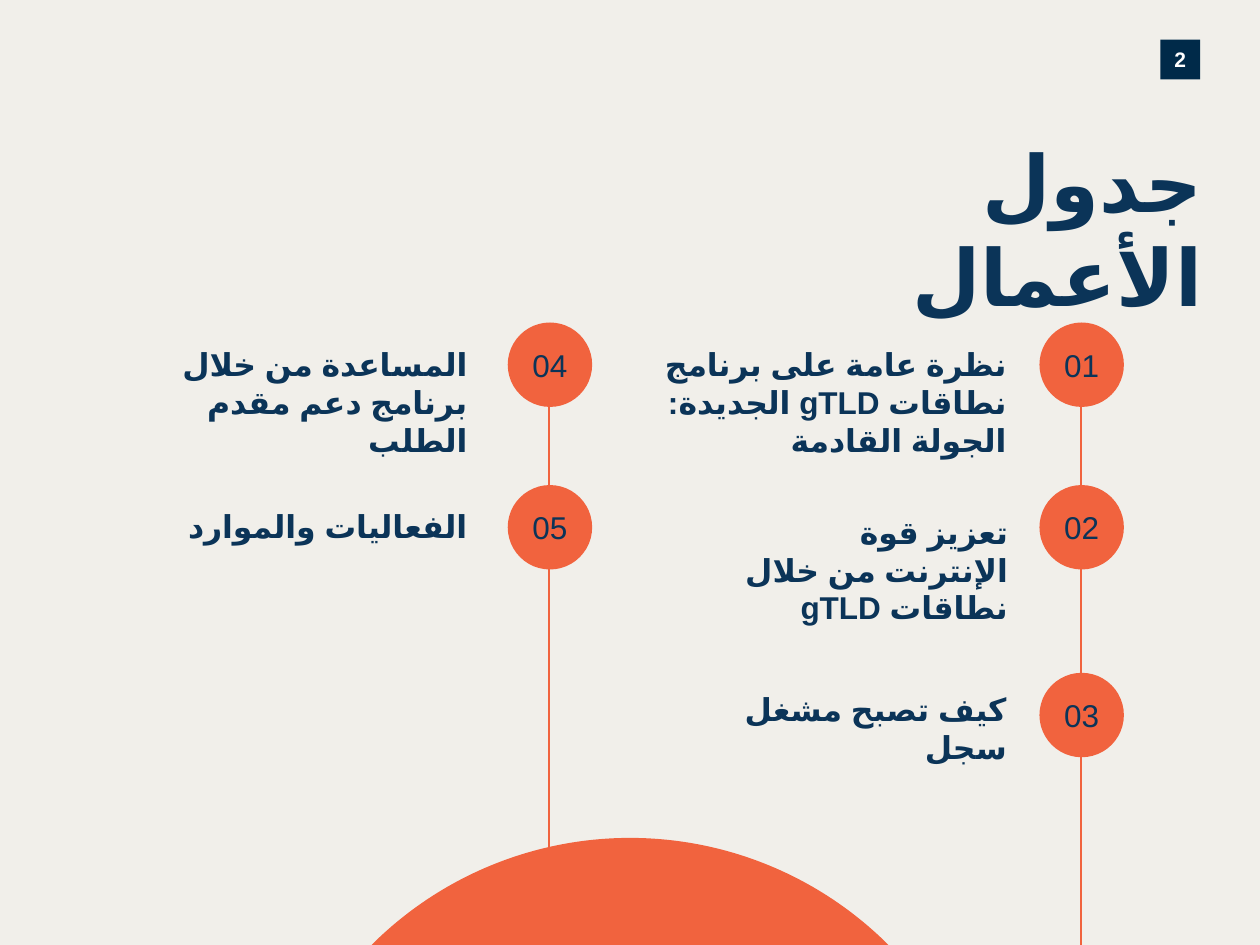
from dataclasses import dataclass

from lxml import etree
from pptx import Presentation
from pptx import util as u
from pptx.dml.color import RGBColor
from pptx.enum import lang, shapes, text
from pptx.oxml import ns


@dataclass(frozen=True)
class Theme:
    back: RGBColor = RGBColor.from_string("F1EFEA")
    ink: RGBColor = RGBColor.from_string("0B3458")
    badge: RGBColor = RGBColor.from_string("002A49")
    accent: RGBColor = RGBColor.from_string("F1633E")
    white: RGBColor = RGBColor.from_string("FFFFFF")
    face: str = "Arial"
    title: float = 45
    body: float = 18
    small: float = 12
    line: float = 1.25


@dataclass(frozen=True)
class Box:
    """Left, top, width and height in grid columns and rows."""
    x: float
    y: float
    w: float
    h: float


@dataclass(frozen=True)
class Item:
    mark: str
    col: float
    row: float
    label: str
    box: Box
    pad: float = 0
    grow: bool = True


THEME = Theme()
KIND = shapes.MSO_SHAPE
ALIGN = text.PP_ALIGN
CELL = u.Inches(0.1)  # the slide is 100 columns by 75 rows
COLS, ROWS = 100, 75
DISC = 6.7
RIGHT, LEFT = 82.5, 40.3
TOP, MID, LOW = 25.6, 38.5, 53.4

ITEMS = [
    Item("01", RIGHT, TOP, "نظرة عامة على برنامج نطاقات gTLD الجديدة: الجولة القادمة",
         Box(52.1, 27.4, 27.8, 9.1)),
    Item("02", RIGHT, MID, "تعزيز قوة الإنترنت من خلال نطاقات gTLD",
         Box(57.5, 39.7, 22.5, 13.8), pad=1, grow=False),
    Item("03", RIGHT, LOW, "كيف تصبح مشغل سجل", Box(52.1, 54.8, 27.8, 9.1)),
    Item("04", LEFT, TOP, "المساعدة من خلال برنامج دعم مقدم الطلب",
         Box(13.4, 27.4, 23.7, 6.1)),
    Item("05", LEFT, MID, "الفعاليات والموارد", Box(6.5, 40.2, 30.6, 6.1)),
]


def grid(n: float) -> int:
    return round(n * CELL)


def place(box: Box) -> tuple:
    return grid(box.x), grid(box.y), grid(box.w), grid(box.h)


def write(shape, words: str, size: float, color: RGBColor, align=ALIGN.RIGHT,
          bold: bool = True, rtl: bool = True, mid: bool = False, pad: float = 0):
    frame = shape.text_frame
    frame.word_wrap = True
    frame.auto_size = text.MSO_AUTO_SIZE.NONE
    frame.vertical_anchor = text.MSO_ANCHOR.MIDDLE if mid else text.MSO_ANCHOR.TOP
    frame.margin_left = frame.margin_top = frame.margin_bottom = grid(pad)
    frame.margin_right = 0
    frame.text = words
    para = frame.paragraphs[0]
    para.alignment = align
    font = para.font
    font.name, font.size, font.bold = THEME.face, u.Pt(size), bold
    font.color.rgb = color
    if rtl:
        props = para._p.get_or_add_pPr()
        props.set("rtl", "1")
        # Arabic letters take the complex-script face and language
        cs = etree.SubElement(props.find(ns.qn("a:defRPr")), ns.qn("a:cs"))
        cs.set("typeface", THEME.face)
        para.runs[0].font.language_id = lang.MSO_LANGUAGE_ID.ARABIC
    return frame


def solid(slide, kind, box: Box, color: RGBColor, *adjust: float):
    shape = slide.shapes.add_shape(kind, *place(box))
    shape.shadow.inherit = False
    shape.fill.solid()
    shape.fill.fore_color.rgb = color
    shape.line.fill.background()
    for i, value in enumerate(adjust):
        shape.adjustments[i] = value
    return shape


def stem(slide, col: float) -> None:
    x = grid(col + DISC / 2 - 0.05)
    line = slide.shapes.add_connector(
        shapes.MSO_CONNECTOR.STRAIGHT, x, grid(31), x, grid(ROWS))
    line.line.color.rgb = THEME.accent
    line.line.width = u.Pt(THEME.line)
    etree.SubElement(line._element.spPr, ns.qn("a:effectLst"))


def entry(slide, item: Item) -> None:
    disc = solid(slide, KIND.ROUND_2_SAME_RECTANGLE,
                 Box(item.col, item.row, DISC, DISC), THEME.accent, 0.5, 0.5)
    write(disc, item.mark, THEME.body, THEME.ink, ALIGN.CENTER, bold=False, mid=True)
    label = slide.shapes.add_textbox(*place(item.box))
    frame = write(label, item.label, THEME.body, THEME.ink, pad=item.pad)
    if item.grow:
        frame.auto_size = text.MSO_AUTO_SIZE.SHAPE_TO_FIT_TEXT


def main() -> None:
    deck = Presentation()
    deck.slide_width, deck.slide_height = grid(COLS), grid(ROWS)
    slide = deck.slides.add_slide(deck.slide_layouts[5])
    slide.background.fill.solid()
    slide.background.fill.fore_color.rgb = THEME.back

    # Rising sun at the foot: a quarter chord turned upwards
    sun = solid(slide, KIND.CHORD, Box(21, 66.5, 58, 58), THEME.accent, 54, 108)
    sun.rotation = 135

    # Page number
    badge = solid(slide, KIND.RECTANGLE, Box(92.1, 3.15, 3.15, 3.15), THEME.badge)
    write(badge, "2", THEME.small, THEME.white, ALIGN.CENTER, rtl=False, mid=True)

    # Title
    title = slide.shapes.title
    title.left, title.top, title.width, title.height = place(Box(58.5, 10.6, 36.9, 8.7))
    write(title, "جدول الأعمال", THEME.title, THEME.ink)

    # Two timelines with numbered entries
    for col in (RIGHT, LEFT):
        stem(slide, col)
    for item in ITEMS:
        entry(slide, item)

    deck.save("out.pptx")


if __name__ == "__main__":
    main()
